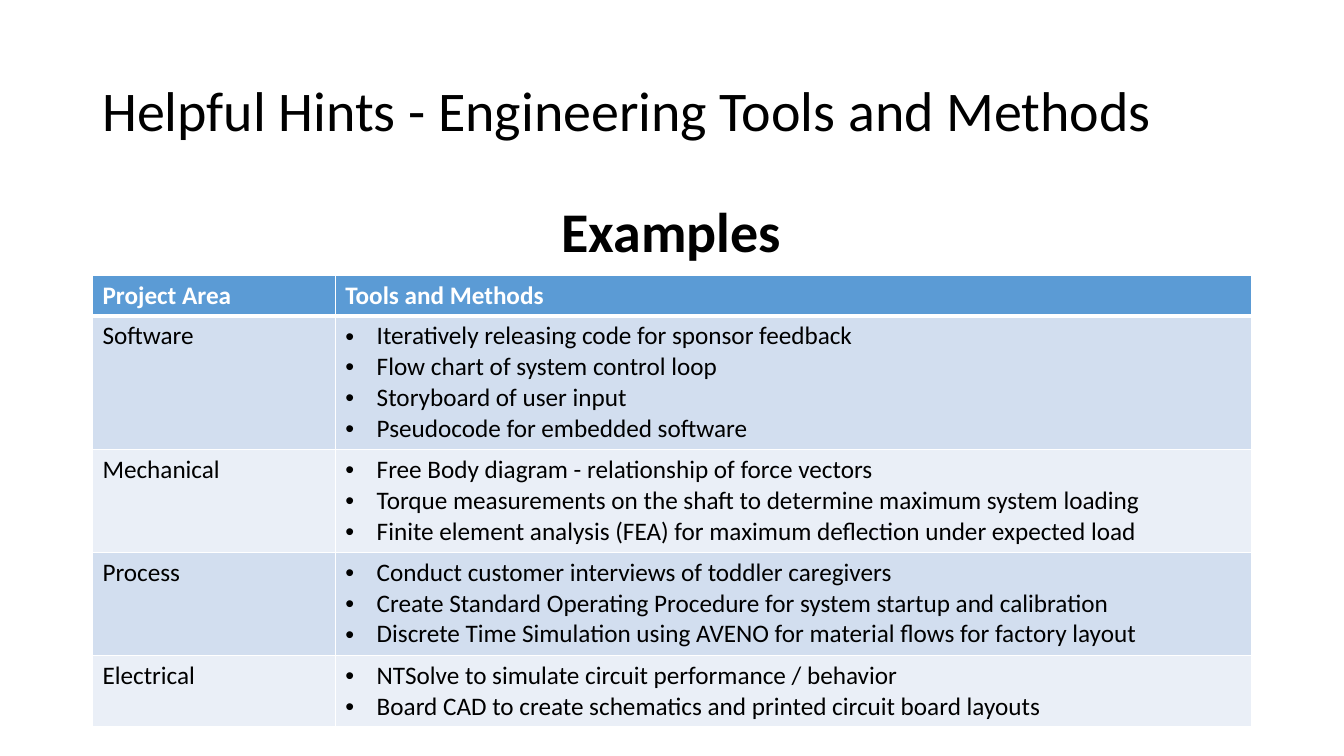
"""Build the slide of engineering tools and methods by project area."""
from dataclasses import dataclass

from lxml import etree
from pptx import Presentation
from pptx import util as u
from pptx.dml.color import RGBColor
from pptx.enum import text
from pptx.oxml.ns import qn

COLORS = {
    "black": "000000",
    "white": "FFFFFF",
    "header": "5B9BD5",
    "odd": "D2DEEF",
    "even": "EAEFF7",
}
FONT = "Calibri"
COLUMN_WIDTHS = (6.12, 23.09)
CELL_PADDING = 0.25
LINE_HEIGHT = 0.78
BULLET_INDENT = u.Cm(0.79)


@dataclass(frozen=True)
class Heading:
    words: str
    left: float
    top: float
    width: float
    height: float
    frame_format: dict
    para_format: dict
    bold: bool = False


@dataclass(frozen=True)
class Area:
    name: str
    methods: tuple[str, ...]


HEADINGS = (
    Heading(
        "Helpful Hints - Engineering Tools and Methods", 2.33, 1.01, 29.21, 3.68,
        {"word_wrap": True, "vertical_anchor": text.MSO_ANCHOR.MIDDLE},
        {"line_spacing": 0.9},
    ),
    Heading(
        "Examples", 13.87, 4.83, 6.1, 1.96,
        {"word_wrap": False, "auto_size": text.MSO_AUTO_SIZE.SHAPE_TO_FIT_TEXT},
        {"alignment": text.PP_ALIGN.CENTER}, bold=True,
    ),
)
AREAS = (
    Area("Software", (
        "Iteratively releasing code for sponsor feedback",
        "Flow chart of system control loop",
        "Storyboard of user input",
        "Pseudocode for embedded software",
    )),
    Area("Mechanical", (
        "Free Body diagram - relationship of force vectors",
        "Torque measurements on the shaft to determine maximum system loading",
        "Finite element analysis (FEA) for maximum deflection under expected load",
    )),
    Area("Process", (
        "Conduct customer interviews of toddler caregivers",
        "Create Standard Operating Procedure for system startup and calibration",
        "Discrete Time Simulation using AVENO for material flows for factory layout",
    )),
    Area("Electrical", (
        "NTSolve to simulate circuit performance / behavior",
        "Board CAD to create schematics and printed circuit board layouts",
    )),
)


def set_format(target, values: dict) -> None:
    for name, value in values.items():
        setattr(target, name, value)


def write(para, words: str, size: int, color: str, bold: bool = False) -> None:
    span = para.add_run()
    span.text = words
    set_format(span.font, {"name": FONT, "size": u.Pt(size), "bold": bold})
    span.font.color.rgb = RGBColor.from_string(COLORS[color])


def add_heading(page, heading: Heading) -> None:
    place = (heading.left, heading.top, heading.width, heading.height)
    box = page.shapes.add_textbox(*map(u.Cm, place))
    set_format(box.text_frame, heading.frame_format)
    para = box.text_frame.paragraphs[0]
    set_format(para, heading.para_format)
    write(para, heading.words, 40, "black", heading.bold)


def add_bullet(para) -> None:
    properties = para._p.get_or_add_pPr()
    properties.set("marL", str(BULLET_INDENT))
    properties.set("indent", str(-BULLET_INDENT))
    etree.SubElement(properties, qn("a:buFont"), typeface="Arial")
    etree.SubElement(properties, qn("a:buChar"), char="•")


def add_borders(cell, top: int, bottom: int) -> None:
    properties = cell._tc.get_or_add_tcPr()
    for side, points in {"L": 1, "R": 1, "T": top, "B": bottom}.items():
        line = etree.SubElement(properties, qn(f"a:ln{side}"), w=str(u.Pt(points)))
        fill = etree.SubElement(line, qn("a:solidFill"))
        etree.SubElement(fill, qn("a:srgbClr"), val=COLORS["white"])


def fill_cell(cell, lines: tuple[str, ...], row: int, bulleted: bool) -> None:
    add_borders(cell, top=3 if row == 1 else 1, bottom=3 if row == 0 else 1)
    band = "header" if row == 0 else "odd" if row % 2 else "even"
    cell.fill.solid()
    cell.fill.fore_color.rgb = RGBColor.from_string(COLORS[band])
    frame = cell.text_frame
    for index, words in enumerate(lines):
        para = frame.add_paragraph() if index else frame.paragraphs[0]
        if bulleted:
            add_bullet(para)
        write(para, words, 18, "black" if row else "white", bold=row == 0)


def add_methods_table(page) -> None:
    rows = (Area("Project Area", ("Tools and Methods",)), *AREAS)
    heights = [CELL_PADDING + LINE_HEIGHT * len(area.methods) for area in rows]
    place = (2.33, 6.93, sum(COLUMN_WIDTHS), sum(heights))
    table = page.shapes.add_table(
        len(rows), len(COLUMN_WIDTHS), *map(u.Cm, place)
    ).table
    table.horz_banding = False
    for column, width in zip(table.columns, COLUMN_WIDTHS):
        column.width = u.Cm(width)
    for row, (area, height) in enumerate(zip(rows, heights)):
        table.rows[row].height = u.Cm(height)
        fill_cell(table.cell(row, 0), (area.name,), row, bulleted=False)
        fill_cell(table.cell(row, 1), area.methods, row, bulleted=row > 0)


def main() -> None:
    deck = Presentation()
    set_format(deck, {"slide_width": u.Cm(33.87), "slide_height": u.Cm(19.05)})
    page = deck.slides.add_slide(deck.slide_layouts[6])
    title, examples = HEADINGS
    add_heading(page, title)
    add_methods_table(page)
    add_heading(page, examples)
    deck.save("out.pptx")


if __name__ == "__main__":
    main()
